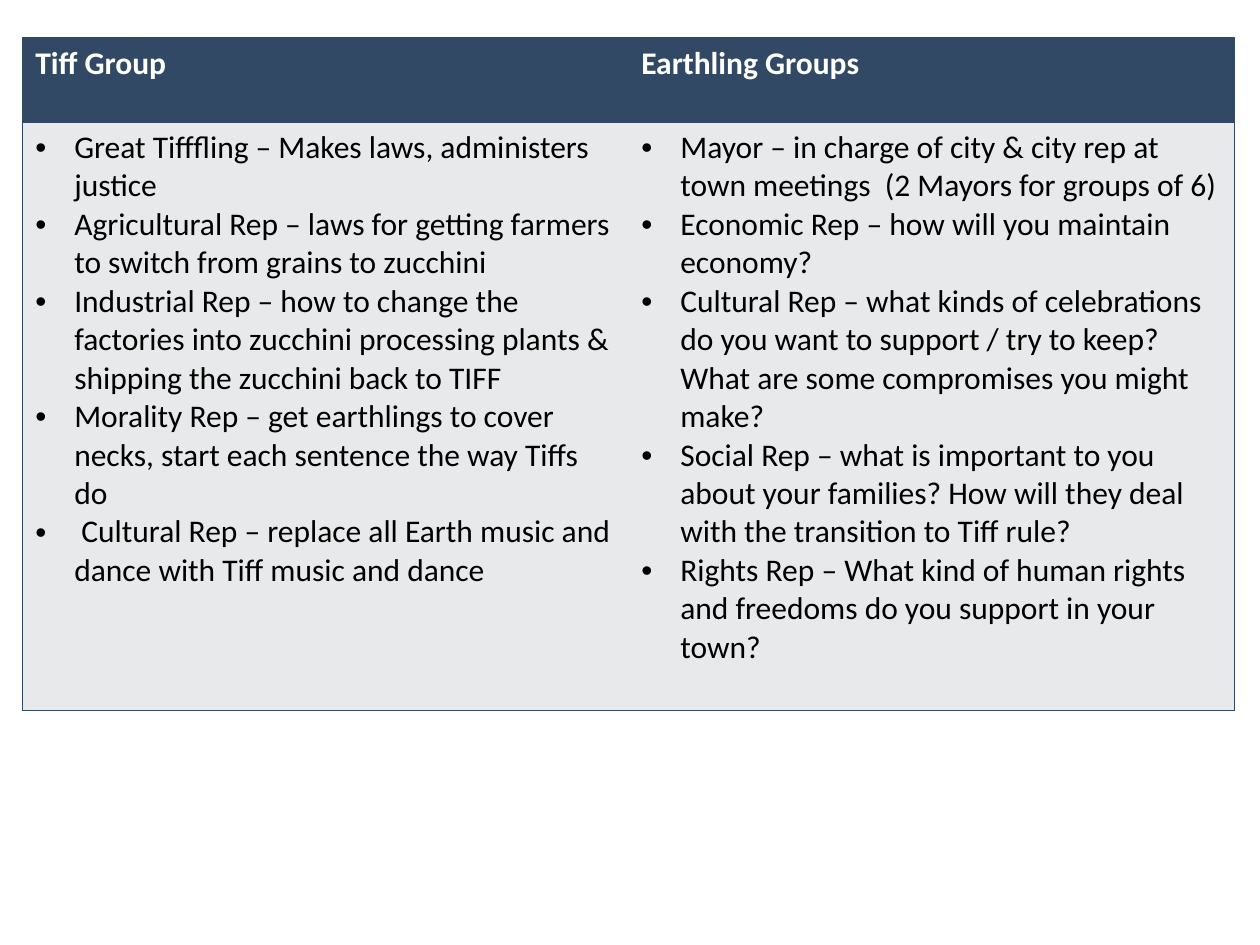
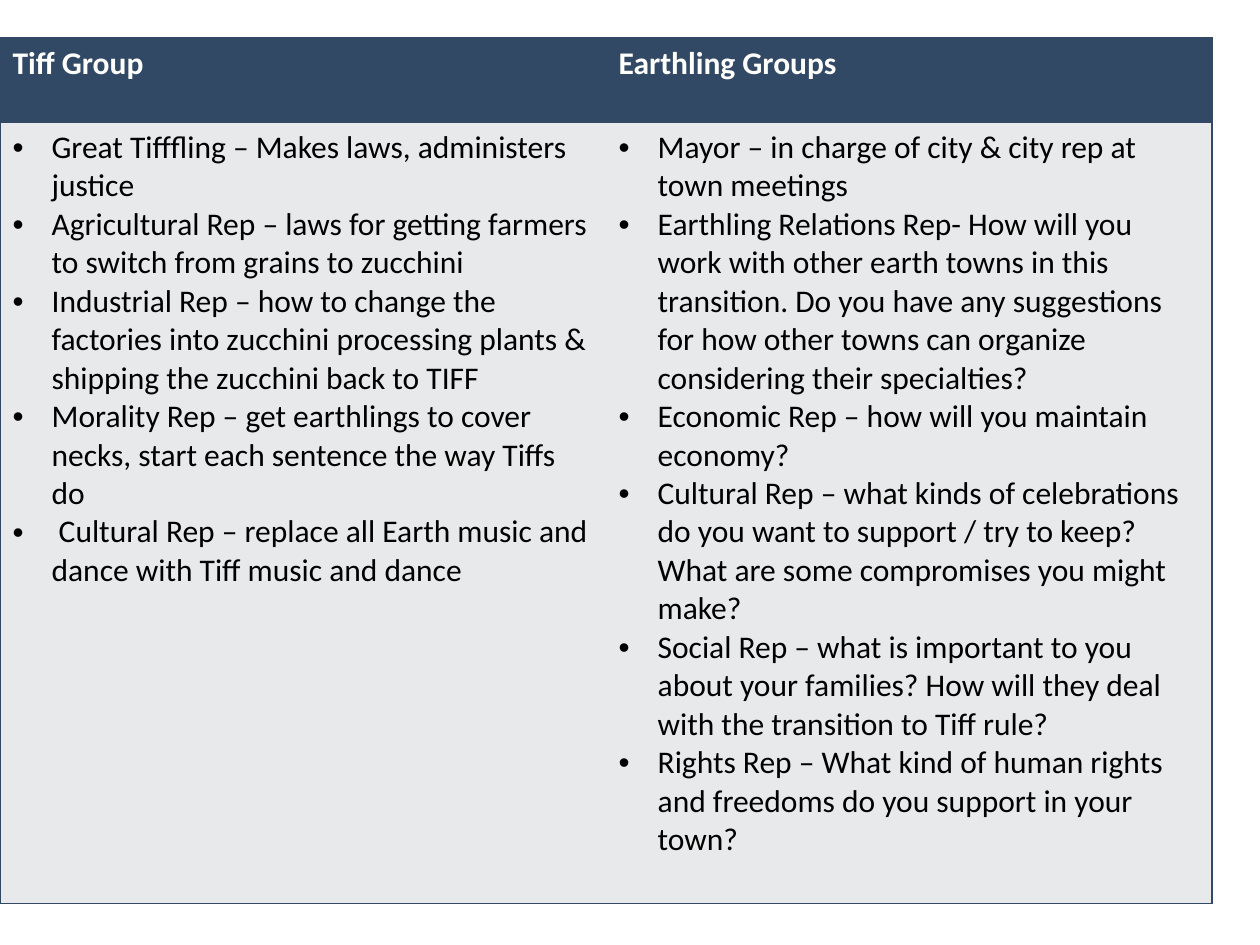
"""Build two slides that set the Tiff roles beside the Earthling roles."""
from lxml.etree import SubElement as Sub
from pptx import Presentation
from pptx.dml.color import RGBColor
from pptx.oxml.ns import qn
from pptx.util import Inches, Pt

NAVY, GREY, WHITE, BLACK = "324966", "E8E9EA", "FFFFFF", "000000"
FONT = "Calibri"
PLAIN = "{2D5ABB26-0587-4C30-8999-92F81FD0307C}"
TOP, WIDTH, HEAD = 0.3, 4.81, 0.67
INDENT = 0.31

HEADS = ["Tiff Group", "Earthling Groups"]
TIFFS = [
    "Great Tifffling – Makes laws, administers justice",
    "Agricultural Rep – laws for getting farmers to switch from grains to zucchini",
    "Industrial Rep – how to change the factories into zucchini processing plants "
    "& shipping the zucchini back to TIFF",
    "Morality Rep – get earthlings to cover necks, start each sentence the way Tiffs do",
    " Cultural Rep – replace all Earth music and dance with Tiff music and dance",
]
MAYOR = "Mayor – in charge of city & city rep at town meetings"
TOWNS = (
    "Earthling Relations Rep- How will you work with other earth towns in this "
    "transition. Do you have any suggestions for how other towns can organize "
    "considering their specialties?"
)
REPS = [
    "Economic Rep – how will you maintain economy?",
    "Cultural Rep – what kinds of celebrations do you want to support / try to keep? "
    "What are some compromises you might make?",
    "Social Rep – what is important to you about your families? How will they deal "
    "with the transition to Tiff rule?",
    "Rights Rep – What kind of human rights and freedoms do you support in your town?",
]


def color(code):
    """Turn a hex string into a colour."""
    return RGBColor.from_string(code)


def edge(cell, sides):
    """Draw navy lines on the named sides of a cell."""
    props = cell._tc.get_or_add_tcPr()
    for side in sides:
        line = Sub(props, qn(f"a:ln{side}"), w=str(Pt(1)))
        fill = Sub(line, qn("a:solidFill"))
        Sub(fill, qn("a:srgbClr"), val=NAVY)


def bullet(para):
    """Give a paragraph a hanging round bullet."""
    props = para._p.get_or_add_pPr()
    props.set("marL", str(Inches(INDENT)))
    props.set("indent", str(-Inches(INDENT)))
    Sub(props, qn("a:buFont"), typeface="Arial")
    Sub(props, qn("a:buChar"), char="•")


def write(para, text, ink, bold):
    """Add one run of text to a paragraph."""
    run = para.add_run()
    run.text = text
    font = run.font
    font.name, font.size, font.bold = FONT, Pt(18), bold
    font.color.rgb = color(ink)


def paint(cell, sides, back):
    """Set the lines and the fill of a cell."""
    edge(cell, sides)
    cell.fill.solid()
    cell.fill.fore_color.rgb = color(back)


def roles(cell, items):
    """Fill a cell with a bulleted list of roles."""
    frame = cell.text_frame
    for i, item in enumerate(items):
        para = frame.add_paragraph() if i else frame.paragraphs[0]
        bullet(para)
        write(para, item, BLACK, False)


def groups(deck, left, height, earth):
    """Add a slide with the table of both groups."""
    slide = deck.slides.add_slide(deck.slide_layouts[6])
    frame = slide.shapes.add_table(
        2, 2, Inches(left), Inches(TOP), Inches(2 * WIDTH), Inches(HEAD + height))
    table = frame.table
    table._tbl.tblPr.find(qn("a:tableStyleId")).text = PLAIN
    table.rows[0].height = Inches(HEAD)
    table.rows[1].height = Inches(height)
    for col, (head, items, sides) in enumerate(zip(HEADS, [TIFFS, earth], ["LTB", "RTB"])):
        table.columns[col].width = Inches(WIDTH)
        title, body = table.cell(0, col), table.cell(1, col)
        paint(title, sides, NAVY)
        write(title.text_frame.paragraphs[0], head, WHITE, True)
        paint(body, sides, GREY)
        roles(body, items)


def main():
    """Build and save the deck."""
    deck = Presentation()
    deck.slide_width, deck.slide_height = Inches(10), Inches(7.5)
    groups(deck, 0.18, 4.67, [MAYOR + "  (2 Mayors for groups of 6)", *REPS])
    groups(deck, 0, 6.2, [MAYOR, TOWNS, *REPS])
    deck.save("out.pptx")


if __name__ == "__main__":
    main()
